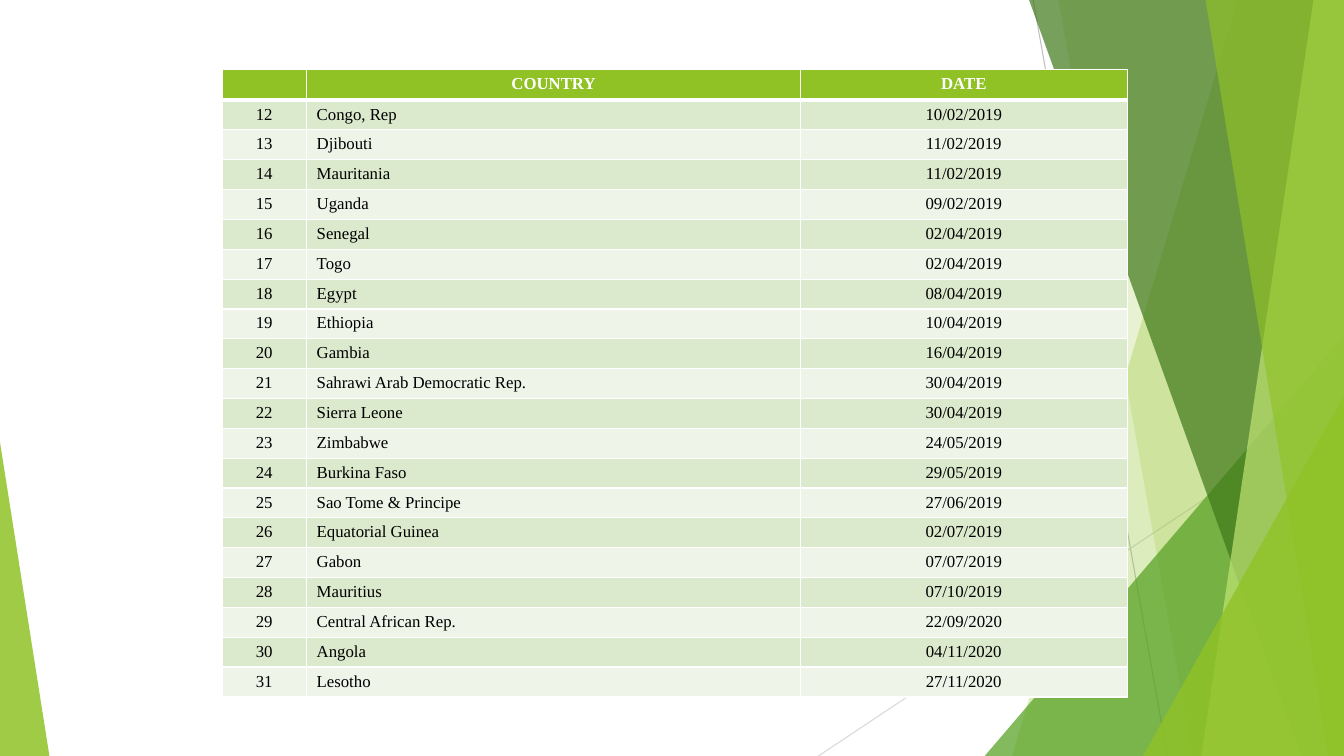
from lxml import etree
from pptx import Presentation
from pptx.dml.color import RGBColor
from pptx.enum.shapes import MSO_CONNECTOR, MSO_SHAPE
from pptx.enum.text import PP_ALIGN
from pptx.oxml.ns import qn
from pptx.util import Pt

STRAIGHT = MSO_CONNECTOR.STRAIGHT
TRIANGLE = MSO_SHAPE.ISOSCELES_TRIANGLE
LEFT, CENTER = PP_ALIGN.LEFT, PP_ALIGN.CENTER

WHITE = RGBColor(0xFF, 0xFF, 0xFF)
BLACK = RGBColor(0, 0, 0)
GRAY = RGBColor(0xBF, 0xBF, 0xBF)
LIGHT_GRAY = RGBColor(0xD9, 0xD9, 0xD9)
LIME = RGBColor(0x90, 0xC2, 0x26)
PALE_LIME = RGBColor(0xC0, 0xE4, 0x74)
GREEN = RGBColor(0x54, 0xA0, 0x21)
DARK_GREEN = RGBColor(0x3F, 0x78, 0x19)
BAND_DARK = RGBColor(0xDB, 0xE9, 0xCD)
BAND_LIGHT = RGBColor(0xEE, 0xF4, 0xE8)

WIDTH, HEIGHT = 960, 540
FONT_SIZE = 12
FIRST_NUMBER = 12
ROW_HEIGHT = 21.34
COLUMN_WIDTHS = (60.5, 352.8, 233.3)
ALIGNMENTS = (CENTER, LEFT, CENTER)

# x1, y1, x2, y2, colour
RULES = [
    (738, 0, 833.8, 540, GRAY),
    (960, 290.2, 584.6, 540, LIGHT_GRAY),
]

# Back to front. Panel: top and bottom x of the left edge, running to the slide's right side.
# Triangle: left, top, width and apex position, standing on the slide's bottom edge.
FACETS = [
    ("panel", (884.2, 722.9), LIME, 30),
    ("panel", (756, 851.8), LIME, 20),
    ("triangle", (703.4, 239.8, 256.6, 1), GREEN, 72),
    ("panel", (735.1, 929.5), DARK_GREEN, 70),
    ("panel", (938.2, 858.2), PALE_LIME, 70),
    ("panel", (861.1, 949), LIME, 65),
    ("triangle", (816.5, 283, 143.5, 1), LIME, 80),
    ("triangle", (0, 316, 35.3, 0), LIME, 85),
]

COUNTRIES = [
    ("Congo, Rep", "10/02/2019"),
    ("Djibouti", "11/02/2019"),
    ("Mauritania", "11/02/2019"),
    ("Uganda", "09/02/2019"),
    ("Senegal", "02/04/2019"),
    ("Togo", "02/04/2019"),
    ("Egypt", "08/04/2019"),
    ("Ethiopia", "10/04/2019"),
    ("Gambia", "16/04/2019"),
    ("Sahrawi Arab Democratic Rep.", "30/04/2019"),
    ("Sierra Leone", "30/04/2019"),
    ("Zimbabwe", "24/05/2019"),
    ("Burkina Faso", "29/05/2019"),
    ("Sao Tome & Principe", "27/06/2019"),
    ("Equatorial Guinea", "02/07/2019"),
    ("Gabon", "07/07/2019"),
    ("Mauritius", "07/10/2019"),
    ("Central African Rep.", "22/09/2020"),
    ("Angola", "04/11/2020"),
    ("Lesotho", "27/11/2020"),
]


def write_text(cell, text, color=BLACK, bold=False, align=LEFT):
    """Write one formatted paragraph; an empty one still keeps the row's font size."""
    para = cell.text_frame.paragraphs[0]
    para.alignment = align
    if not text:
        end = etree.SubElement(para._p, qn("a:endParaRPr"))
        end.set("sz", str(FONT_SIZE * 100))
        return
    span = para.add_run()
    span.text = text
    span.font.name = "Times New Roman"
    span.font.size = Pt(FONT_SIZE)
    span.font.bold = bold
    span.font.color.rgb = color


def set_borders(cell, **widths):
    """Draw white borders, given as side=points, ahead of the cell's fill."""
    properties = cell._tc.get_or_add_tcPr()
    for index, (side, width) in enumerate(widths.items()):
        border = etree.Element(qn(f"a:ln{side}"), w=str(Pt(width)))
        fill = etree.SubElement(border, qn("a:solidFill"))
        etree.SubElement(fill, qn("a:srgbClr"), val=str(WHITE))
        properties.insert(index, border)


deck = Presentation()
deck.slide_width, deck.slide_height = Pt(WIDTH), Pt(HEIGHT)
page = deck.slides.add_slide(deck.slide_layouts[6])

for x1, y1, x2, y2, color in RULES:
    rule = page.shapes.add_connector(STRAIGHT, Pt(x1), Pt(y1), Pt(x2), Pt(y2))
    rule.line.color.rgb = color
    rule.line.width = Pt(0.75)
    etree.SubElement(rule._element.spPr, qn("a:effectLst"))

for kind, geometry, color, opacity in FACETS:
    if kind == "panel":
        top_x, bottom_x = geometry
        outline = page.shapes.build_freeform(Pt(top_x), Pt(0))
        corners = [(WIDTH, 0), (WIDTH, HEIGHT), (bottom_x, HEIGHT)]
        outline.add_line_segments([(Pt(x), Pt(y)) for x, y in corners], close=True)
        facet = outline.convert_to_shape()
    else:
        left, top, width, apex = geometry
        facet = page.shapes.add_shape(TRIANGLE, Pt(left), Pt(top), Pt(width), Pt(HEIGHT - top))
        facet.adjustments[0] = apex
    facet.shadow.inherit = False
    facet.line.fill.background()
    facet.fill.solid()
    facet.fill.fore_color.rgb = color
    color_node = facet._element.spPr.find(qn("a:solidFill"))[0]
    etree.SubElement(color_node, qn("a:alpha"), val=str(opacity * 1000))

rows = [("", "COUNTRY", "DATE")]
rows += [(str(number), *entry) for number, entry in enumerate(COUNTRIES, FIRST_NUMBER)]
table = page.shapes.add_table(
    len(rows), len(COLUMN_WIDTHS), Pt(158.5), Pt(49.6),
    Pt(sum(COLUMN_WIDTHS)), Pt(ROW_HEIGHT * len(rows)),
).table
for column, width in zip(table.columns, COLUMN_WIDTHS):
    column.width = Pt(width)

for row_index, texts in enumerate(rows):
    table.rows[row_index].height = Pt(ROW_HEIGHT)
    header = row_index == 0
    band = LIME if header else BAND_DARK if row_index % 2 else BAND_LIGHT
    for column_index, text in enumerate(texts):
        cell = table.cell(row_index, column_index)
        cell.fill.solid()
        cell.fill.fore_color.rgb = band
        set_borders(cell, L=1, R=1, T=3 if row_index == 1 else 1, B=3 if header else 1)
        write_text(cell, text, color=WHITE if header else BLACK, bold=header,
                   align=CENTER if header else ALIGNMENTS[column_index])

deck.save("out.pptx")
